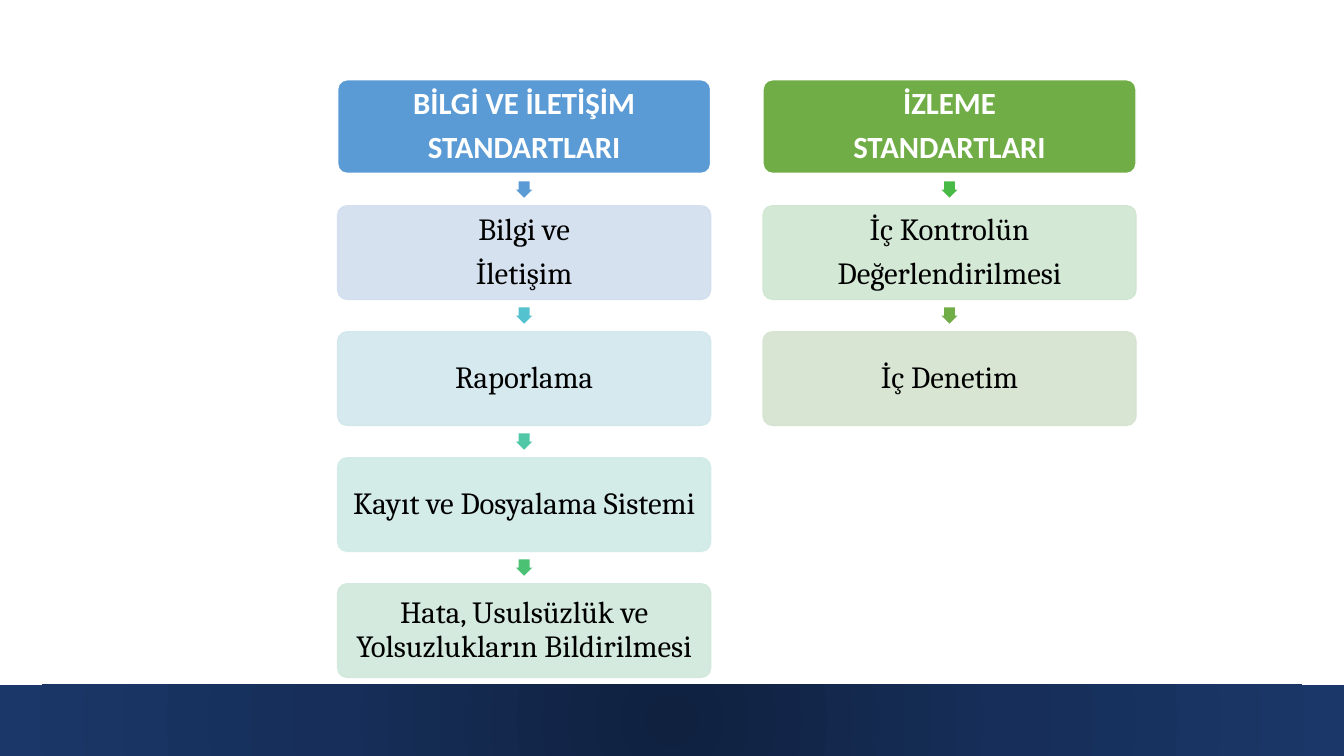
"""Builds a slide with two columns of control standards, each a chain of boxes."""
from lxml import etree
from pptx import Presentation
from pptx.dml.color import RGBColor
from pptx.enum.shapes import MSO_SHAPE
from pptx.enum.text import MSO_ANCHOR, PP_ALIGN
from pptx.oxml import parse_xml
from pptx.oxml.ns import nsdecls, qn
from pptx.util import Cm, Pt

ROUNDED, ARROW, RECTANGLE = MSO_SHAPE.ROUNDED_RECTANGLE, MSO_SHAPE.DOWN_ARROW, MSO_SHAPE.RECTANGLE
MIDDLE, CENTER = MSO_ANCHOR.MIDDLE, PP_ALIGN.CENTER

COLORS = {
    "white": "FFFFFF", "black": "000000",
    "blue": "5B9BD5", "cyan": "55C3CF", "teal": "50C8A7",
    "emerald": "4BC174", "green": "4ABA46", "olive": "70AD47",
    "pale blue": "D2DEEF", "pale cyan": "D1E7ED", "pale teal": "D0EBE6",
    "pale emerald": "D0E8DB", "pale green": "CFE6D1", "pale olive": "D5E3CF",
    "band center": "10213F", "band middle": "162E59", "band edge": "1B3769",
}
BAND_STOPS = [(0, "band center"), (50, "band middle"), (100, "band edge")]

# heading lines, heading color, then (lines, box color, color of the arrow above)
COLUMNS = [
    (["BİLGİ VE İLETİŞİM", "STANDARTLARI"], "blue", [
        (["Bilgi ve", "İletişim"], "pale blue", "blue"),
        (["Raporlama"], "pale cyan", "cyan"),
        (["Kayıt ve Dosyalama Sistemi"], "pale teal", "teal"),
        (["Hata, Usulsüzlük ve Yolsuzlukların Bildirilmesi"], "pale emerald", "emerald"),
    ]),
    (["İZLEME", "STANDARTLARI"], "olive", [
        (["İç Kontrolün", "Değerlendirilmesi"], "pale green", "green"),
        (["İç Denetim"], "pale olive", "olive"),
    ]),
]

SLIDE_W, SLIDE_H = 33.87, 19.05
LEFT, TOP = 8.51, 2.01
BOX_W, BOX_H = 9.4, 2.36
COLUMN_STEP, ROW_STEP = 10.81, 3.175
ARROW_SIZE, INSET = 0.41, 0.07
BAND_TOP = 17.25


def rgb(color):
    return RGBColor.from_string(COLORS[color])


def add_shape(slide, preset, left, top, width, height, fill):
    shape = slide.shapes.add_shape(preset, Cm(left), Cm(top), Cm(width), Cm(height))
    shape.shadow.inherit = False
    shape.fill.solid()
    shape.fill.fore_color.rgb = rgb(fill)
    shape.line.fill.background()
    return shape


def add_band(slide):
    band = add_shape(slide, RECTANGLE, 0, BAND_TOP, SLIDE_W, SLIDE_H - BAND_TOP, "band center")
    stops = "".join(
        f'<a:gs pos="{position * 1000}"><a:srgbClr val="{COLORS[color]}"/></a:gs>'
        for position, color in BAND_STOPS)
    gradient = parse_xml(
        f'<a:gradFill {nsdecls("a")}><a:gsLst>{stops}</a:gsLst><a:path path="circle">'
        '<a:fillToRect l="50000" t="50000" r="50000" b="50000"/></a:path></a:gradFill>')
    properties = band.element.spPr
    properties.replace(properties.find(qn("a:solidFill")), gradient)


def add_box(slide, left, top, lines, fill, heading=False):
    box = add_shape(slide, ROUNDED, left, top, BOX_W, BOX_H, fill)
    box.adjustments[0] = 0.1
    box.line.width = Pt(1)
    box.line.color.rgb = rgb("white" if heading else fill)
    if not heading:
        for color in box.element.spPr.iter(qn("a:srgbClr")):
            etree.SubElement(color, qn("a:alpha"), val="90000")
    frame = box.text_frame
    frame.word_wrap = True
    frame.vertical_anchor = MIDDLE
    frame.margin_left = frame.margin_right = Cm(INSET)
    frame.margin_top = frame.margin_bottom = Cm(INSET)
    frame.text = "\n".join(lines)
    for paragraph in frame.paragraphs:
        paragraph.alignment = CENTER
        paragraph.line_spacing = 0.9
        paragraph.space_after = Pt(7.7)
        paragraph.font.size = Pt(22)
        paragraph.font.name = "Calibri" if heading else "Cambria"
        paragraph.font.bold = heading
        paragraph.font.color.rgb = rgb("white" if heading else "black")


def add_arrow(slide, column_left, box_top, fill):
    left = column_left + (BOX_W - ARROW_SIZE) / 2
    top = box_top - (ROW_STEP - BOX_H + ARROW_SIZE) / 2
    arrow = add_shape(slide, ARROW, left, top, ARROW_SIZE, ARROW_SIZE, fill)
    arrow.adjustments[0] = 0.67


def main():
    presentation = Presentation()
    presentation.slide_width, presentation.slide_height = Cm(SLIDE_W), Cm(SLIDE_H)
    slide = presentation.slides.add_slide(presentation.slide_layouts[6])
    add_band(slide)
    for column, (heading, heading_color, standards) in enumerate(COLUMNS):
        left = LEFT + column * COLUMN_STEP - column * 0.09
        add_box(slide, left, TOP, heading, heading_color, heading=True)
        for row, (lines, box_color, arrow_color) in enumerate(standards, start=1):
            top = TOP + row * ROW_STEP
            add_arrow(slide, left, top, arrow_color)
            add_box(slide, left, top, lines, box_color)
    presentation.save("out.pptx")


if __name__ == "__main__":
    main()
